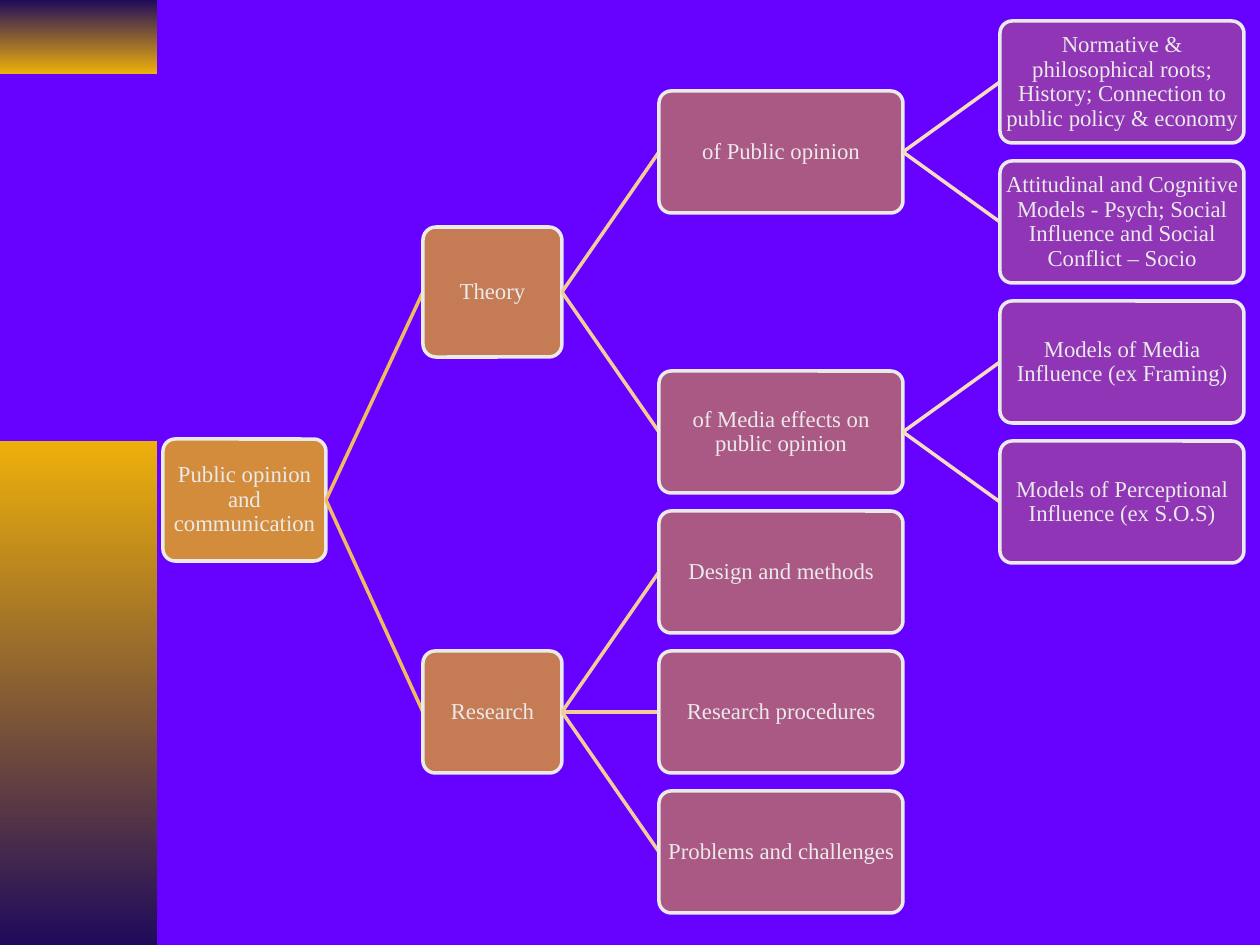
"""Build a slide with a tree of public opinion topics."""
from lxml import etree
from pptx import Presentation, util as u
from pptx.dml.color import RGBColor
from pptx.enum import shapes, text
from pptx.oxml.ns import qn

PX = 914400 // 126


def tint(fmt, code):
    fmt.solid()
    fmt.fore_color.rgb = RGBColor.from_string(code)


deck = Presentation()
deck.slide_width, deck.slide_height = 1260 * PX, 945 * PX
slide = deck.slides.add_slide(deck.slide_layouts[6])
tint(slide.background.fill, "6600FF")

for top, high, ends in (
    (0, 74, ("200B5B", "EEB00B")),
    (441, 504, ("EEB00B", "200B5B")),
):
    band = slide.shapes.add_shape(
        shapes.MSO_SHAPE.RECTANGLE, 0, top * PX, 157 * PX, high * PX)
    band.shadow.inherit = False
    band.line.fill.background()
    band.fill.gradient()
    band.fill.gradient_angle = 270
    for stop, code in zip(band.fill.gradient_stops, ends):
        stop.color.rgb = RGBColor.from_string(code)

levels = (
    (163, 163, 80, None),
    (423, 139, 70, "F0BA5E"),
    (659, 244, 50, "F3CC97"),
    (1000, 244, 30, "F7DCBD"),
)
nodes = (
    (0, 500, 122, "Public opinion and communication"),
    (1, 292, 130, "Theory"),
    (2, 152, 122, "of Public opinion"),
    (3, 82, 122, "Normative & philosophical roots; History; "
                 "Connection to public policy & economy"),
    (3, 222, 122, "Attitudinal and Cognitive Models - Psych; "
                  "Social Influence and Social Conflict – Socio"),
    (2, 432, 122, "of Media effects on public opinion"),
    (3, 362, 122, "Models of Media Influence (ex Framing)"),
    (3, 502, 122, "Models of Perceptional Influence (ex S.O.S)"),
    (1, 712, 122, "Research"),
    (2, 572, 122, "Design and methods"),
    (2, 712, 122, "Research procedures"),
    (2, 852, 122, "Problems and challenges"),
)

last = {}
for level, mid, high, words in nodes:
    left, wide, alpha, hue = levels[level]
    if level:
        link = slide.shapes.add_connector(
            shapes.MSO_CONNECTOR.STRAIGHT, 0, 0, 0, 0)
        link.begin_connect(last[level - 1], 3)
        tint(link.line.fill, hue)
        link.line.width = u.Pt(2)
        etree.SubElement(link._element.spPr, qn("a:effectLst"))

    box = slide.shapes.add_shape(
        shapes.MSO_SHAPE.ROUNDED_RECTANGLE,
        left * PX, (mid - high // 2) * PX, wide * PX, high * PX)
    box.adjustments[0] = 0.1
    box.shadow.inherit = False
    tint(box.fill, "EEB00B")
    shade = box._element.spPr.find(qn("a:solidFill"))[0]
    etree.SubElement(shade, qn("a:alpha"), val=str(alpha * 1000))
    tint(box.line.fill, "EAEAEA")
    box.line.width = u.Pt(2)
    last[level] = box
    if level:
        link.end_connect(box, 1)

    frame = box.text_frame
    frame.word_wrap = True
    frame.vertical_anchor = text.MSO_ANCHOR.MIDDLE
    frame.margin_left = frame.margin_right = PX
    frame.margin_top = frame.margin_bottom = PX
    para = frame.paragraphs[0]
    para.alignment = text.PP_ALIGN.CENTER
    para.line_spacing = 0.9
    run = para.add_run()
    run.text = words
    run.font.name = "Times New Roman"
    run.font.size = u.Pt(13)
    tint(run.font.fill, "EAEAEA")

deck.save("out.pptx")
